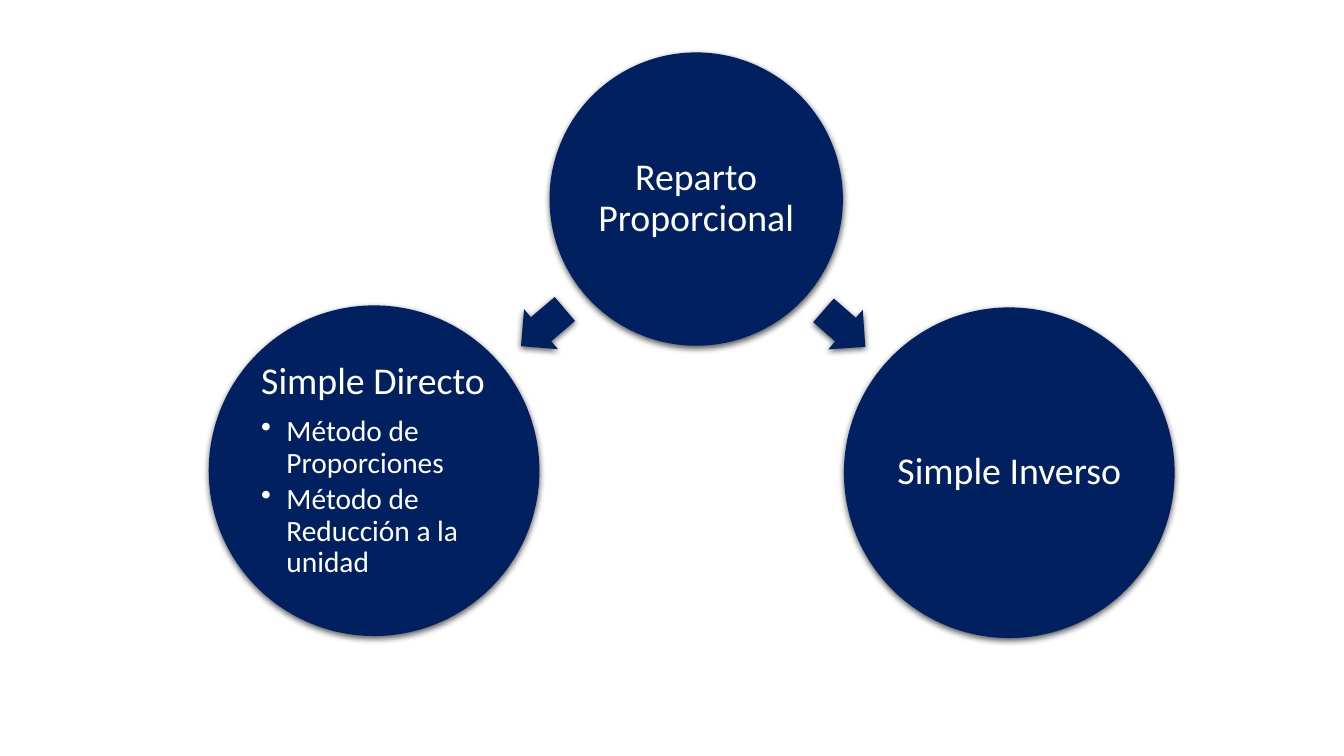
import pptx
import pptx.dml.color
import pptx.enum.shapes
import pptx.enum.text
import pptx.oxml
import pptx.util
from pptx.oxml.ns import nsdecls

Inches = pptx.util.Inches
Pt = pptx.util.Pt
SHAPE = pptx.enum.shapes.MSO_SHAPE
ALIGN = pptx.enum.text.PP_ALIGN

SLIDE_WIDTH, SLIDE_HEIGHT = 13.33, 7.5
NAVY, WHITE = "002060", "FFFFFF"
TOPIC_SIZE, METHOD_SIZE = 27, 21
CHILD_DIAMETER = 3.28


def color(hex_code):
    return pptx.dml.color.RGBColor.from_string(hex_code)


def add_navy_shape(slide, kind, left, top, width, height):
    """Add a borderless navy shape with a soft shadow below it."""
    shape = slide.shapes.add_shape(
        kind, Inches(left), Inches(top), Inches(width), Inches(height))
    shape.fill.solid()
    shape.fill.fore_color.rgb = color(NAVY)
    shape.line.fill.background()
    shape.shadow.inherit = False
    effects = shape.element.spPr.find(pptx.oxml.ns.qn("a:effectLst"))
    effects.append(pptx.oxml.parse_xml(
        f'<a:outerShdw {nsdecls("a")} blurRad="{Pt(4.5)}" dist="{Pt(1.5)}" '
        'dir="5400000" rotWithShape="0">'
        '<a:srgbClr val="000000"><a:alpha val="63000"/></a:srgbClr>'
        '</a:outerShdw>'))
    return shape


def write(paragraph, text, size=TOPIC_SIZE, align=ALIGN.CENTER,
          after=0.35, bullet=False):
    """Fill a paragraph; after is the space below as a share of the size."""
    paragraph.text = text
    paragraph.alignment = align
    paragraph.line_spacing = 0.9
    paragraph.space_after = Pt(size * after)
    if bullet:
        paragraph.level = 1
        properties = paragraph._p.get_or_add_pPr()
        properties.set("marL", str(Inches(0.25)))
        properties.set("indent", str(-Inches(0.25)))
        properties.append(pptx.oxml.parse_xml(
            f'<a:buChar {nsdecls("a")} char="•"/>'))
    paragraph.font.name = "Calibri"
    paragraph.font.size = Pt(size)
    paragraph.font.color.rgb = color(WHITE)


def add_topic(slide, left, top, diameter, topic, methods=()):
    circle = add_navy_shape(slide, SHAPE.OVAL, left, top, diameter, diameter)
    frame = circle.text_frame
    frame.word_wrap = True
    frame.vertical_anchor = pptx.enum.text.MSO_ANCHOR.MIDDLE
    frame.margin_left = frame.margin_right = Inches(0.04)
    frame.margin_top = frame.margin_bottom = Inches(0.04)
    write(frame.paragraphs[0], topic,
          align=ALIGN.LEFT if methods else ALIGN.CENTER)
    for method in methods:
        write(frame.add_paragraph(), method, size=METHOD_SIZE,
              align=ALIGN.LEFT, after=0.15, bullet=True)


def add_branch_arrow(slide, left, top, width, height, angle):
    arrow = add_navy_shape(slide, SHAPE.RIGHT_ARROW, left, top, width, height)
    arrow.adjustments[0] = 0.6
    arrow.adjustments[1] = 0.5
    arrow.rotation = angle


def build_hierarchy(slide):
    add_topic(slide, 5.45, 0.52, 2.91, "Reparto Proporcional")
    add_branch_arrow(slide, 5.1, 2.99, 0.57, 0.52, 139.7)
    add_topic(slide, 2.07, 3.03, CHILD_DIAMETER, "Simple Directo",
              ["Método de Proporciones", "Método de Reducción a la unidad"])
    add_branch_arrow(slide, 8.1, 3, 0.55, 0.52, 41.1)
    add_topic(slide, 8.37, 3.05, CHILD_DIAMETER, "Simple Inverso")


def main():
    deck = pptx.Presentation()
    deck.slide_width = Inches(SLIDE_WIDTH)
    deck.slide_height = Inches(SLIDE_HEIGHT)
    blank_layout = deck.slide_layouts[6]
    build_hierarchy(deck.slides.add_slide(blank_layout))
    deck.save("out.pptx")


if __name__ == "__main__":
    main()
